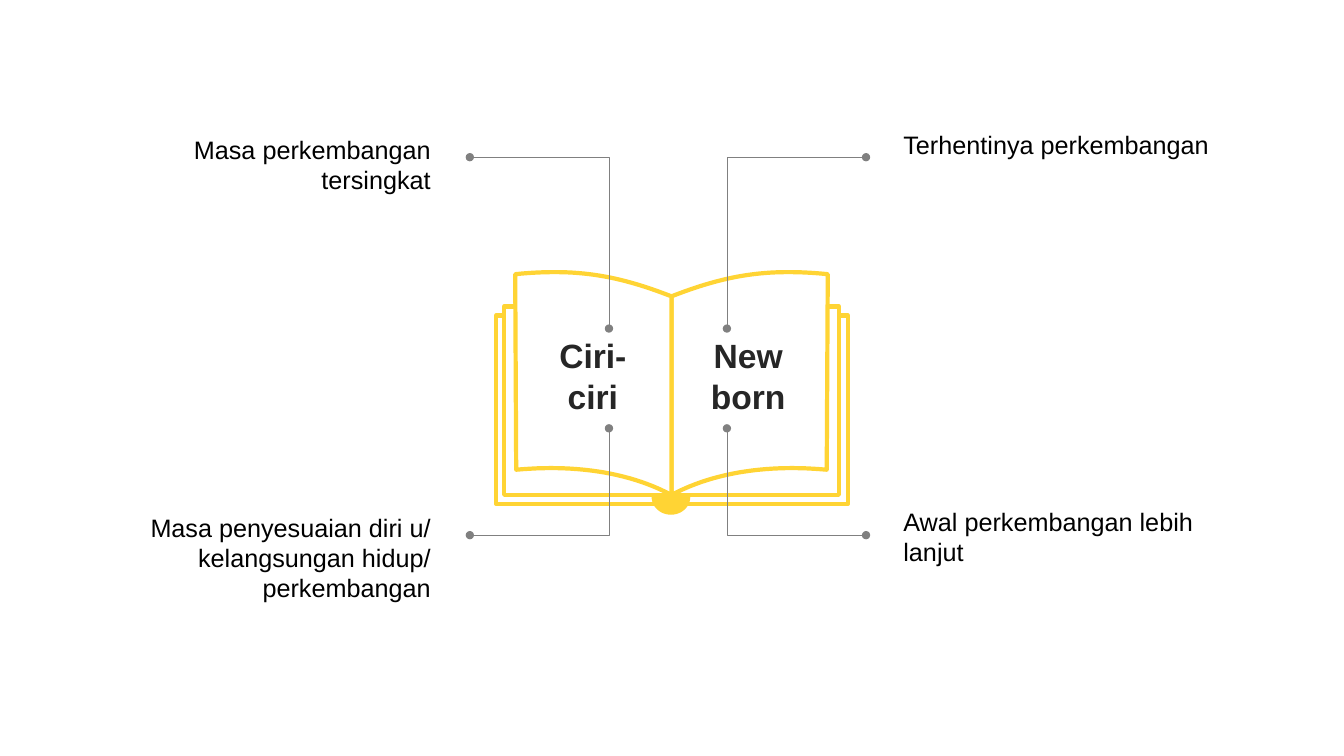
from math import cos, pi, sin

from lxml.etree import SubElement
from pptx import Presentation
from pptx.dml.color import RGBColor
from pptx.enum.shapes import MSO_CONNECTOR as Connector, MSO_SHAPE as Shape
from pptx.enum.text import MSO_ANCHOR as Anchor, MSO_AUTO_SIZE as AutoSize, PP_ALIGN as Align
from pptx.oxml.ns import qn
from pptx.util import Inches, Pt

YELLOW = RGBColor(0xFF, 0xD4, 0x34)
WHITE = RGBColor(0xFF, 0xFF, 0xFF)
GRAY = RGBColor(0x80, 0x80, 0x80)
BLACK = RGBColor(0, 0, 0)
DARK = RGBColor(0x26, 0x26, 0x26)

CALLOUT = {"size": Pt(18), "name": "Arial", "bold": False}
HEADING = {"size": Pt(24), "name": "Arial", "bold": True}


def paint(shape, fill, width):
    """Give a book part its fill and yellow outline."""
    shape.shadow.inherit = False
    shape.fill.solid()
    shape.fill.fore_color.rgb = fill
    shape.line.color.rgb = YELLOW
    shape.line.width = Pt(width)


def curve(start, first, second, end, steps=24):
    """Return points along a cubic curve."""
    points = []
    for step in range(steps + 1):
        t = step / steps
        weights = ((1 - t) ** 3, 3 * t * (1 - t) ** 2, 3 * t * t * (1 - t), t ** 3)
        points.append(tuple(
            sum(weight * value for weight, value in zip(weights, values))
            for values in zip(start, first, second, end)))
    return points


def add_outline(shapes, points, fill, width):
    """Draw a closed outline through points given in inches."""
    corners = [(Inches(x), Inches(y)) for x, y in points]
    builder = shapes.build_freeform(*corners[0], scale=1.0)
    builder.add_line_segments(corners[1:], close=True)
    paint(builder.convert_to_shape(), fill, width)


def add_book(slide, left, top):
    """Draw the open book as one group from its top left corner."""
    shapes = slide.shapes.add_group_shape().shapes
    for x, y, width in ((0, 0.41, 3.49), (0.08, 0.32, 3.32)):
        cover = shapes.add_shape(Shape.RECTANGLE, Inches(left + x), Inches(top + y),
                                 Inches(width), Inches(1.87))
        paint(cover, WHITE, 3)
    spine = left + 1.74
    upper = curve((0, 0.22), (0.54, 0.01), (0.94, -0.06), (1.55, 0))
    lower = curve((1.54, 1.94), (1, 1.89), (0.45, 1.95), (0, 2.19))
    for side in (1, -1):
        page = [(spine + side * x, top + y) for x, y in upper + lower]
        add_outline(shapes, page, WHITE, 3)
    angles = [pi * step / 24 for step in range(25)]
    clasp = [(spine - 0.005 + 0.185 * cos(a), top + 2.21 + 0.17 * sin(a)) for a in angles]
    add_outline(shapes, clasp, YELLOW, 1)


def add_text(slide, box, text, font, color, align, anchor=Anchor.TOP, inset=0.1):
    """Add one wrapped paragraph in the given box."""
    frame = slide.shapes.add_textbox(*map(Inches, box)).text_frame
    settings = {"word_wrap": True, "auto_size": AutoSize.SHAPE_TO_FIT_TEXT,
                "vertical_anchor": anchor, "margin_left": Inches(inset)}
    for name, value in settings.items():
        setattr(frame, name, value)
    paragraph = frame.paragraphs[0]
    paragraph.alignment = align
    run = paragraph.add_run()
    run.text = text
    for name, value in font.items():
        setattr(run.font, name, value)
    run.font.color.rgb = color


def add_leader(slide, start, end):
    """Draw a line that runs level from start, then upright to end."""
    leader = slide.shapes.add_connector(Connector.ELBOW, *map(Inches, start + end))
    leader.line.color.rgb = GRAY
    leader.line.width = Pt(0.5)
    properties = leader.element.spPr
    guides = properties.find(qn("a:prstGeom")).get_or_add_avLst()
    SubElement(guides, qn("a:gd"), name="adj1", fmla="val 100000")
    line = properties.find(qn("a:ln"))
    for tip in ("a:headEnd", "a:tailEnd"):
        SubElement(line, qn(tip), type="oval")
    SubElement(properties, qn("a:effectLst"))


def add_callout(slide, side, box, text, outer_y, inner_y):
    """Add a callout on the left (-1) or right (1) with its leader."""
    align = Align.LEFT if side > 0 else Align.RIGHT
    add_text(slide, box, text, CALLOUT, BLACK, align, inset=0)
    center = 6.625
    add_leader(slide, (center + side * 1.965, outer_y), (center + side * 0.585, inner_y))


def main():
    """Build and save the slide."""
    presentation = Presentation()
    presentation.slide_width = Inches(13.33)
    presentation.slide_height = Inches(7.5)
    slide = presentation.slides.add_slide(presentation.slide_layouts[6])
    add_book(slide, 4.92, 2.72)
    callouts = (
        (1, 4.97, 0.71, "Awal perkembangan lebih lanjut", 5.31, 4.25),
        (1, 1.23, 0.4, "Terhentinya perkembangan", 1.56, 3.26),
        (-1, 5.03, 1.01, "Masa penyesuaian diri u/ kelangsungan hidup/ perkembangan",
         5.31, 4.25),
        (-1, 1.28, 0.71, "Masa perkembangan tersingkat", 1.56, 3.26),
    )
    for side, top, height, text, outer_y, inner_y in callouts:
        left = 8.96 if side > 0 else 0.88
        add_callout(slide, side, (left, top, 3.49, height), text, outer_y, inner_y)
    for left, text in ((5.29, "Ciri-ciri"), (6.83, "New born")):
        add_text(slide, (left, 3.27, 1.18, 0.91), text, HEADING, DARK,
                 Align.CENTER, Anchor.MIDDLE)
    presentation.save("out.pptx")


if __name__ == "__main__":
    main()
